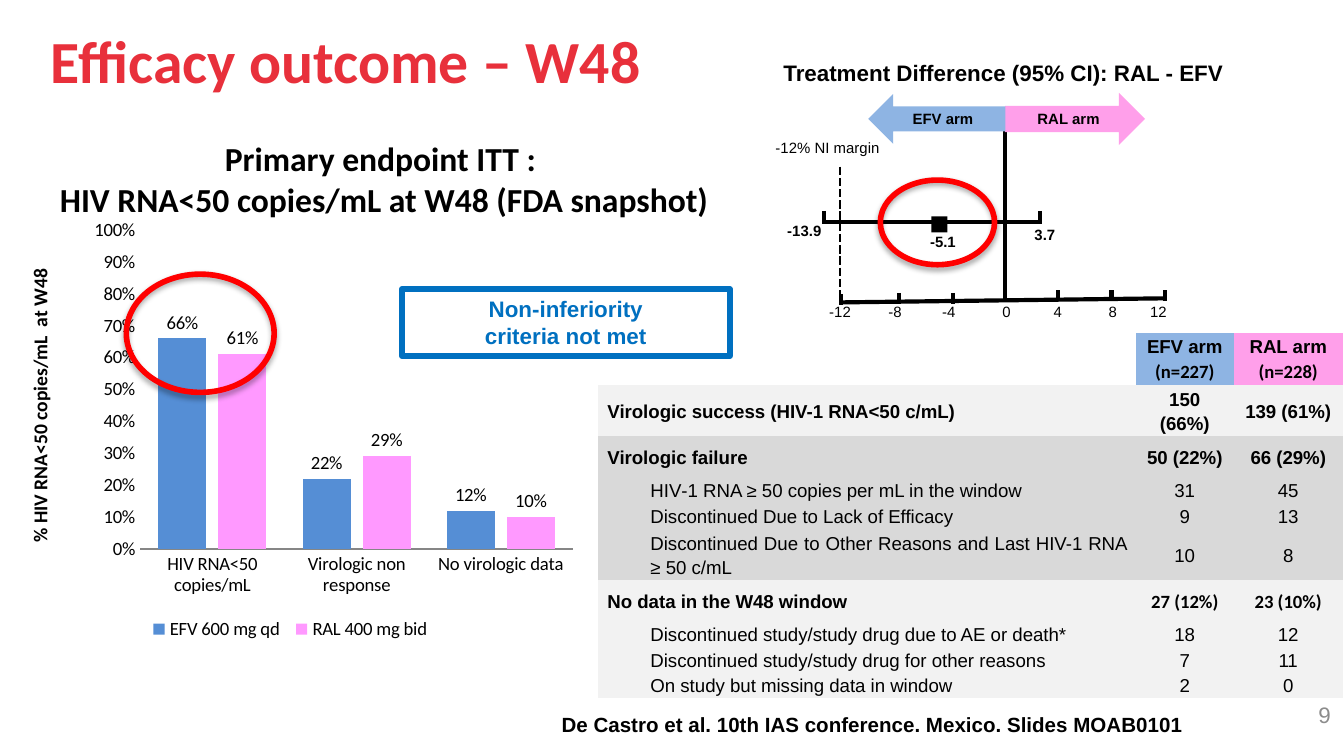
from lxml import etree
from pptx import Presentation
from pptx.chart.data import CategoryChartData
from pptx.dml.color import RGBColor
from pptx.enum.chart import XL_CHART_TYPE, XL_LABEL_POSITION, XL_LEGEND_POSITION, XL_TICK_MARK
from pptx.enum.dml import MSO_LINE
from pptx.enum.shapes import MSO_CONNECTOR, MSO_SHAPE
from pptx.enum.text import MSO_ANCHOR, PP_ALIGN
from pptx.oxml import parse_xml
from pptx.oxml.ns import nsdecls, qn
from pptx.util import Inches, Pt

LEFT, CENTER, RIGHT, JUSTIFY = PP_ALIGN.LEFT, PP_ALIGN.CENTER, PP_ALIGN.RIGHT, PP_ALIGN.JUSTIFY
TOP, MIDDLE = MSO_ANCHOR.TOP, MSO_ANCHOR.MIDDLE
STRAIGHT = MSO_CONNECTOR.STRAIGHT
NO_TICKS = XL_TICK_MARK.NONE

COLORS = {
    "black": "000000", "title": "E8303B", "number": "8C8C8C", "highlight": "FF0000",
    "verdict": "0070C0", "efv": "8EB4E3", "ral": "FF9FEA", "efv_bar": "558ED5",
    "ral_bar": "FF99FF", "axis": "868686", "light": "F2F2F2", "dark": "D9D9D9",
}
RGB = {name: RGBColor.from_string(value) for name, value in COLORS.items()}

# Widescreen slide, 16:9
prs = Presentation()
prs.slide_width = Inches(10)
prs.slide_height = prs.slide_width * 9 // 16
slide = prs.slides.add_slide(prs.slide_layouts[6])
shapes = slide.shapes


def write(frame, text, size, align=LEFT, color="black", anchor=TOP, inset=None,
          wrap=True, **font_format):
    """Fill a text frame, one paragraph per line of text."""
    frame.word_wrap = wrap
    frame.vertical_anchor = anchor
    if inset is not None:
        for side in ("left", "top", "right", "bottom"):
            setattr(frame, f"margin_{side}", Inches(inset))
    font_values = {"name": "Arial", "size": Pt(size), "bold": True} | font_format
    for i, line in enumerate(text.split("\n")):
        paragraph = frame.paragraphs[0] if i == 0 else frame.add_paragraph()
        paragraph.alignment = align
        run = paragraph.add_run()
        run.text = line
        run.font.color.rgb = RGB[color]
        for name, value in font_values.items():
            setattr(run.font, name, value)


def add_line(x1, y1, x2, y2, width=2.25):
    line = shapes.add_connector(STRAIGHT, Inches(x1), Inches(y1), Inches(x2), Inches(y2))
    line.line.color.rgb = RGB["black"]
    line.line.width = Pt(width)
    etree.SubElement(line.element.spPr, qn("a:effectLst"))
    return line


# Headings, citation and page number
small = {"size": 8, "inset": 0}
calibri = {"name": "Calibri"}
texts = [
    ((0.28, -0.03, 9, 0.94), "Efficacy outcome – W48",
     {"size": 32, "color": "title", "anchor": MIDDLE, **calibri}),
    ((4.08, 5.25, 4.86, 0.29),
     "De Castro et al. 10th IAS conference. Mexico. Slides MOAB0101", {"size": 11}),
    ((0.28, 0.98, 5.16, 0.71),
     "Primary endpoint ITT : \nHIV RNA<50 copies/mL at W48 (FDA snapshot)",
     {"size": 18, "align": CENTER, **calibri}),
    ((5.73, 0.39, 3.51, 0.3), "Treatment Difference (95% CI): RAL - EFV",
     {"size": 12, "wrap": False}),
    ((7.67, 5.12, 2.33, 0.39), "9",
     {"size": 12, "align": RIGHT, "color": "number", "anchor": MIDDLE, "bold": False}),
    # Confidence interval labels
    ((5.77, 1.03, 1.77, 0.14), "-12% NI margin", {**small, "bold": False}),
    ((5.67, 1.65, 0.63, 0.15), "-13.9", {**small, "align": CENTER}),
    ((6.92, 1.73, 0.22, 0.15), "-5.1", {**small, "wrap": False}),
    ((7.46, 1.68, 0.63, 0.15), "3.7", {**small, "align": CENTER}),
]
# Difference axis: label, tick position, tick top, label centre
axis_ticks = [
    ("-12", 6.26, 2.19, 6.25), ("-8", 6.69, 2.18, 6.66), ("-4", 7.09, 2.18, 7.06),
    ("0", 7.48, 2.17, 7.49), ("4", 7.87, 2.16, 7.87), ("8", 8.27, 2.16, 8.28),
    ("12", 8.67, 2.16, 8.62),
]
for label, tick_x, tick_top, label_x in axis_ticks:
    add_line(tick_x, tick_top, tick_x, tick_top + 0.08)
    texts.append(((label_x - 0.26, 2.25, 0.52, 0.15), label,
                  {**small, "align": CENTER, "bold": False}))
for box, text, text_format in texts:
    write(shapes.add_textbox(*map(Inches, box)).text_frame, text, **text_format)

# Axis, zero line, margin and confidence interval
add_line(6.26, 2.25, 8.67, 2.22)
add_line(7.48, 0.9, 7.48, 2.17)
margin = add_line(6.25, 1.24, 6.25, 2.22, 1.5)
margin.line.dash_style = MSO_LINE.SQUARE_DOT
add_line(6.12, 1.65, 7.75, 1.65)
for end_x in (6.13, 7.74):
    add_line(end_x, 1.57, end_x, 1.66)
estimate = shapes.add_shape(MSO_SHAPE.RECTANGLE, Inches(6.93), Inches(1.61),
                            Inches(0.12), Inches(0.12))
estimate.shadow.inherit = False
estimate.fill.solid()
estimate.fill.fore_color.rgb = RGB["black"]
estimate.line.fill.background()

# Arrows towards each arm
for preset, box, text, color in (
    (MSO_SHAPE.RIGHT_ARROW, (7.48, 0.69, 1.04, 0.39), "RAL arm", "ral"),
    (MSO_SHAPE.LEFT_ARROW, (6.46, 0.7, 1.02, 0.37), "EFV arm", "efv"),
):
    arrow = shapes.add_shape(preset, *map(Inches, box))
    arrow.shadow.inherit = False
    arrow.fill.solid()
    arrow.fill.fore_color.rgb = RGB[color]
    arrow.line.fill.background()
    write(arrow.text_frame, text, align=CENTER, anchor=MIDDLE, **small)

# Outcome table: kind, shade, height, cells
rows = [
    ("head", None, 0.38, ("", "EFV arm\n(n=227)", "RAL arm\n(n=228)")),
    ("group", "light", 0.38, ("Virologic success (HIV-1 RNA<50 c/mL)", "150 (66%)", "139 (61%)")),
    ("group", "dark", 0.3, ("Virologic failure", "50 (22%)", "66 (29%)")),
    ("item", "dark", 0.19, ("HIV‑1 RNA ≥ 50 copies per mL in the window", "31", "45")),
    ("item", "dark", 0.19, ("Discontinued Due to Lack of Efficacy", "9", "13")),
    ("item", "dark", 0.37,
     ("Discontinued Due to Other Reasons and Last HIV-1 RNA ≥ 50 c/mL", "10", "8")),
    ("group", "light", 0.3, ("No data in the W48 window", "27 (12%)", "23 (10%)")),
    ("item", "light", 0.19, ("Discontinued study/study drug due to AE or death*", "18", "12")),
    ("item", "light", 0.19, ("Discontinued study/study drug for other reasons", "7", "11")),
    ("item", "light", 0.19, ("On study but missing data in window", "2", "0")),
]
outcomes = shapes.add_table(len(rows), 3, Inches(4.45), Inches(2.48), Inches(5.54),
                            Inches(sum(row[2] for row in rows))).table
outcomes.first_row = outcomes.horz_banding = False
no_grid = "{2D5ABB26-0587-4C30-8999-92F81FD0307C}"
outcomes._tbl.tblPr.find(qn("a:tableStyleId")).text = no_grid
for column, width in zip(outcomes.columns, (4, 0.73, 0.81)):
    column.width = Inches(width)
for r, (kind, shade, height, cells) in enumerate(rows):
    outcomes.rows[r].height = Inches(height)
    for c, text in enumerate(cells):
        cell = outcomes.cell(r, c)
        fill = (None, "efv", "ral")[c] if kind == "head" else shade
        if fill:
            cell.fill.solid()
            cell.fill.fore_color.rgb = RGB[fill]
        else:
            cell.fill.background()
        cell.margin_left = cell.margin_right = Inches(0.05 if kind == "head" else 0.07)
        cell.margin_top = cell.margin_bottom = 0
        cell.vertical_anchor = TOP if kind == "head" else MIDDLE
        calibri_value = c > 0 and cells[0].startswith("No data")
        for i, line in enumerate(text.split("\n")):
            frame = cell.text_frame
            paragraph = frame.paragraphs[0] if i == 0 else frame.add_paragraph()
            paragraph.text = line
            paragraph.alignment = CENTER if c else JUSTIFY
            paragraph.line_spacing = 1.15
            if kind == "item" and c == 0:
                paragraph._p.get_or_add_pPr().set("marL", str(Inches(0.32)))
            cell_font = {"name": "Calibri" if i or calibri_value else "Arial",
                         "size": Pt(10), "bold": kind != "item"}
            for name, value in cell_font.items():
                setattr(paragraph.font, name, value)
            paragraph.font.color.rgb = RGB["black"]

# Response chart
responses = CategoryChartData(number_format="0%")
responses.categories = ["HIV RNA<50 copies/mL", "Virologic non response", "No virologic data"]
responses.add_series("EFV 600 mg qd ", (0.66, 0.22, 0.12))
responses.add_series("RAL 400 mg bid ", (0.61, 0.29, 0.1))
chart = shapes.add_chart(XL_CHART_TYPE.COLUMN_CLUSTERED, Inches(0), Inches(1.55),
                         Inches(4.35), Inches(3.25), responses).chart
chart.has_title = False
chart.font.name, chart.font.size = "Calibri", Pt(10)
chart.font.color.rgb = RGB["black"]
chart.has_legend = True
chart.legend.position = XL_LEGEND_POSITION.BOTTOM
chart.legend.include_in_layout = False
plot = chart.plots[0]
plot.gap_width, plot.overlap, plot.vary_by_categories = 75, -25, False
plot.has_data_labels = True
labels = plot.data_labels
labels.show_value, labels.position = True, XL_LABEL_POSITION.OUTSIDE_END
labels.number_format, labels.number_format_is_linked = "0%", False
for series, color in zip(plot.series, ("efv_bar", "ral_bar")):
    series.format.fill.solid()
    series.format.fill.fore_color.rgb = RGB[color]
    series.invert_if_negative = False
arms, share = chart.category_axis, chart.value_axis
arms.major_tick_mark = share.major_tick_mark = NO_TICKS
arms.format.line.color.rgb = RGB["axis"]
share.format.line.fill.background()
share.has_major_gridlines = False
share.minimum_scale, share.maximum_scale, share.major_unit = 0, 1, 0.1
share.tick_labels.number_format, share.tick_labels.number_format_is_linked = "0%", False
write(share.axis_title.text_frame, "% HIV RNA<50 copies/mL  at W48", 10.5, **calibri)

# Fixed places for the plot area and the axis title
for parent, index, target, place in (
    (chart.element.find(".//" + qn("c:plotArea")), 0, '<c:layoutTarget val="inner"/>',
     {"x": 0.24, "y": 0.05, "w": 0.74, "h": 0.73}),
    (share.axis_title.element, 1, "", {"x": 0.04, "y": 0.13}),
):
    for old_layout in parent.findall(qn("c:layout")):
        parent.remove(old_layout)
    modes = "".join(f'<c:{key}Mode val="edge"/>' for key in "xy")
    values = "".join(f'<c:{key} val="{value}"/>' for key, value in place.items())
    parent.insert(index, parse_xml(
        f'<c:layout {nsdecls("c")}><c:manualLayout>{target}{modes}{values}'
        '</c:manualLayout></c:layout>'))

# Highlight rings and verdict box
for preset, box, color in (
    (MSO_SHAPE.OVAL, (0.94, 2.04, 1.1, 0.88), "highlight"),
    (MSO_SHAPE.OVAL, (6.55, 1.34, 0.85, 0.63), "highlight"),
    (MSO_SHAPE.RECTANGLE, (2.99, 2.15, 2.44, 0.5), "verdict"),
):
    outline = shapes.add_shape(preset, *map(Inches, box))
    outline.shadow.inherit = False
    outline.fill.background()
    outline.line.color.rgb = RGB[color]
    outline.line.width = Pt(3)
    if color == "verdict":
        write(outline.text_frame, "Non-inferiority\ncriteria not met", 12, CENTER, color)
    else:
        outline.element.spPr.find(qn("a:effectLst")).append(parse_xml(
            f'<a:outerShdw {nsdecls("a")} blurRad="{Pt(3.1)}" dist="{Pt(1.8)}" dir="5400000" '
            f'rotWithShape="0"><a:srgbClr val="{COLORS["black"]}"><a:alpha val="35000"/>'
            '</a:srgbClr></a:outerShdw>'))

prs.save("out.pptx")
